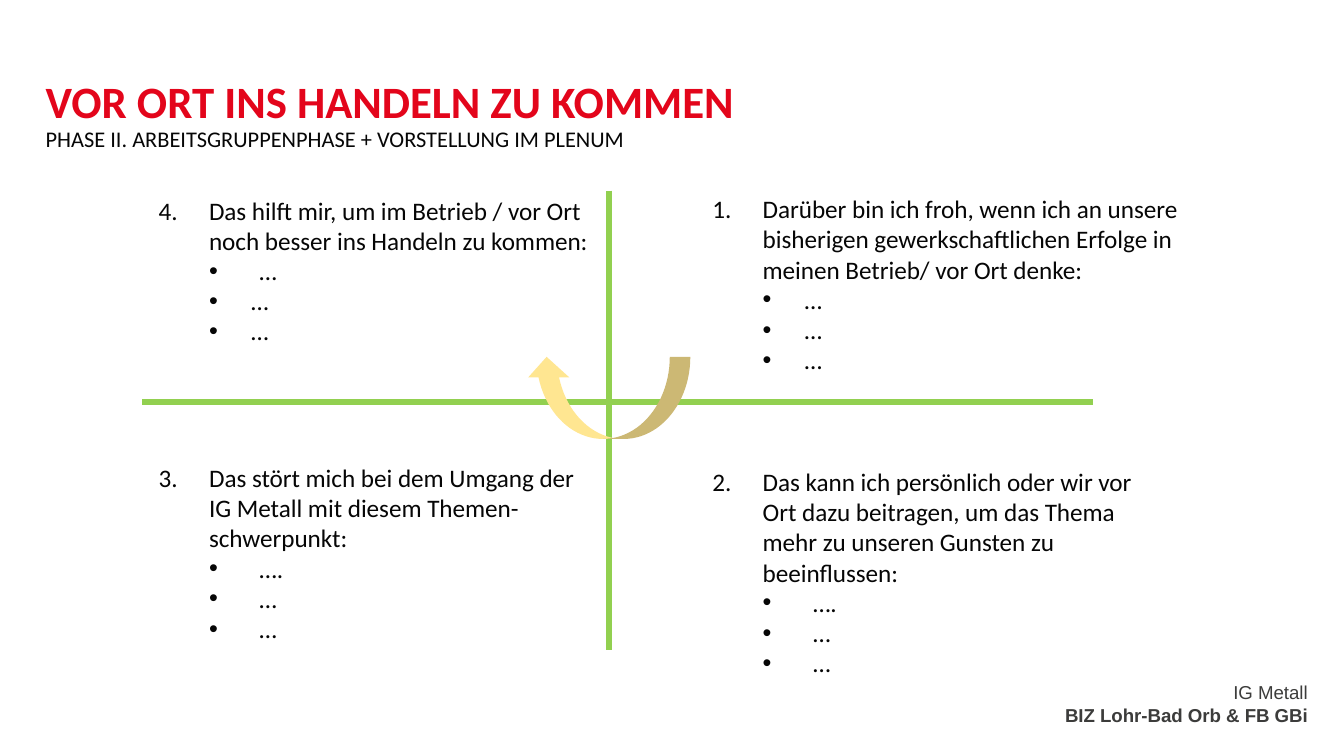
import dataclasses
import typing

import lxml.etree
import pptx
import pptx.dml.color
import pptx.enum.shapes
import pptx.enum.text
import pptx.oxml.ns
import pptx.util

Pt = pptx.util.Pt
qn = pptx.oxml.ns.qn

RED = "E3051B"
BLACK = "060606"
GREY = "3C3C3B"
GREEN = "92D050"
YELLOW = "FFE691"
NUMBER_INDENT = 27
HEADING = {"name": "Calibri", "size": Pt(24), "bold": True}
SUBHEADING = {"name": "Calibri", "size": Pt(12), "bold": False}
BODY = {"name": "Calibri", "size": Pt(13.5)}
SENDER = {"name": "Arial", "size": Pt(10), "bold": False}
SENDER_BOLD = {**SENDER, "bold": True}


@dataclasses.dataclass
class Box:
    left: float
    top: float
    width: float
    height: float

    def lengths(self) -> list:
        return [Pt(value) for value in dataclasses.astuple(self)]


@dataclasses.dataclass
class Question:
    number: int
    box: Box
    wording: str
    answers: list[str]
    answer_indents: list[float]


@dataclasses.dataclass
class Axis:
    start: tuple[float, float]
    end: tuple[float, float]


QUESTIONS = [
    Question(1, Box(381.6, 103.7, 261.4, 98),
             "Darüber bin ich froh, wenn ich an unsere bisherigen gewerkschaftlichen "
             "Erfolge in meinen Betrieb/ vor Ort denke:",
             ["…", "…", "…"], [49.5, 49.5, 49.5]),
    Question(3, Box(85, 247.7, 229, 114.5),
             "Das stört mich bei dem Umgang der IG Metall mit diesem Themen-schwerpunkt:",
             ["….", "…", "…"], [54, 54, 54]),
    Question(2, Box(381.6, 249.8, 229, 114.5),
             "Das kann ich persönlich oder wir vor Ort dazu beitragen, um das Thema mehr "
             "zu unseren Gunsten zu beeinflussen:",
             ["….", "…", "…"], [54, 54, 54]),
    Question(4, Box(85, 104.4, 235.4, 82),
             "Das hilft mir, um im Betrieb / vor Ort noch besser ins Handeln zu kommen:",
             ["…", "…", "…"], [54, 49.5, 49.5]),
]
AXES = [Axis((326.2, 102.2), (326.2, 348.5)), Axis((585.4, 215.3), (76.3, 215.3))]


def color(hex_value: str) -> pptx.dml.color.RGBColor:
    return pptx.dml.color.RGBColor.from_string(hex_value)


def apply(target: typing.Any, values: dict[str, typing.Any]) -> None:
    for name, value in values.items():
        setattr(target, name, value)


def prepare_frame(frame, fit: pptx.enum.text.MSO_AUTO_SIZE) -> None:
    apply(frame, {
        "margin_left": 0, "margin_top": 0, "margin_right": 0, "margin_bottom": 0,
        "word_wrap": True, "auto_size": fit,
        "vertical_anchor": pptx.enum.text.MSO_ANCHOR.TOP,
    })


def add_run(paragraph, wording: str, style: dict, hex_value: str) -> None:
    run = paragraph.add_run()
    run.text = wording
    apply(run.font, style)
    run.font.color.rgb = color(hex_value)


def add_text_frame(slide, box: Box):
    frame = slide.shapes.add_textbox(*box.lengths()).text_frame
    prepare_frame(frame, pptx.enum.text.MSO_AUTO_SIZE.SHAPE_TO_FIT_TEXT)
    return frame


def set_marker(paragraph, tag: str, margin: float, hanging: float, **marker: str) -> None:
    properties = paragraph._p.get_or_add_pPr()
    properties.set("marL", str(Pt(margin)))
    properties.set("indent", str(-Pt(hanging)))
    lxml.etree.SubElement(properties, qn("a:buFont"), typeface="Arial" if tag == "a:buChar" else "+mj-lt")
    lxml.etree.SubElement(properties, qn(tag), **marker)


def add_question(slide, question: Question) -> None:
    frame = add_text_frame(slide, question.box)
    heading = frame.paragraphs[0]
    set_marker(heading, "a:buAutoNum", NUMBER_INDENT, NUMBER_INDENT,
               type="arabicPeriod", startAt=str(question.number))
    add_run(heading, question.wording, BODY, BLACK)
    for answer, indent in zip(question.answers, question.answer_indents):
        item = frame.add_paragraph()
        item.level = 1
        set_marker(item, "a:buChar", indent, indent - NUMBER_INDENT, char="•")
        add_run(item, answer, BODY, BLACK)


def add_axis(slide, axis: Axis) -> None:
    ends = [Pt(value) for value in axis.start + axis.end]
    line = slide.shapes.add_connector(pptx.enum.shapes.MSO_CONNECTOR.STRAIGHT, *ends)
    line.line.color.rgb = color(GREEN)
    line.line.width = Pt(3)
    lxml.etree.SubElement(line._element.spPr, qn("a:effectLst"))


def add_cycle_arrow(slide, box: Box) -> None:
    arrow = slide.shapes.add_shape(pptx.enum.shapes.MSO_SHAPE.CURVED_LEFT_ARROW, *box.lengths())
    arrow.rotation = 90
    arrow.shadow.inherit = False
    arrow.fill.solid()
    arrow.fill.fore_color.rgb = color(YELLOW)
    arrow.line.fill.background()


def add_sender(slide, box: Box) -> None:
    frame = add_text_frame(slide, box)
    lines = [("IG Metall", SENDER), ("BIZ Lohr-Bad Orb & FB GBi", SENDER_BOLD)]
    for index, (wording, style) in enumerate(lines):
        paragraph = frame.add_paragraph() if index else frame.paragraphs[0]
        paragraph.alignment = pptx.enum.text.PP_ALIGN.RIGHT
        add_run(paragraph, wording, style, GREY)


def fill_title(slide, box: Box) -> None:
    title = slide.shapes.title
    apply(title, dict(zip(("left", "top", "width", "height"), box.lengths())))
    prepare_frame(title.text_frame, pptx.enum.text.MSO_AUTO_SIZE.NONE)
    paragraph = title.text_frame.paragraphs[0]
    apply(paragraph, {"alignment": pptx.enum.text.PP_ALIGN.LEFT, "line_spacing": 0.9})
    add_run(paragraph, "VOR ORT INS HANDELN ZU KOMMEN", HEADING, RED)
    paragraph.add_line_break()
    add_run(paragraph, "PHASE II. ARBEITSGRUPPENPHASE + VORSTELLUNG IM PLENUM", SUBHEADING, BLACK)


def main() -> None:
    deck = pptx.Presentation()
    apply(deck, {"slide_width": Pt(720), "slide_height": Pt(405)})
    slide = deck.slides.add_slide(deck.slide_layouts.get_by_name("Title Only"))
    fill_title(slide, Box(24.5, 42.5, 612.7, 44))
    add_sender(slide, Box(481.7, 365, 218.9, 24.5))
    for axis in AXES:
        add_axis(slide, axis)
    add_cycle_arrow(slide, Box(303.8, 169.2, 44, 88))
    for question in QUESTIONS:
        add_question(slide, question)
    deck.save("out.pptx")


if __name__ == "__main__":
    main()
